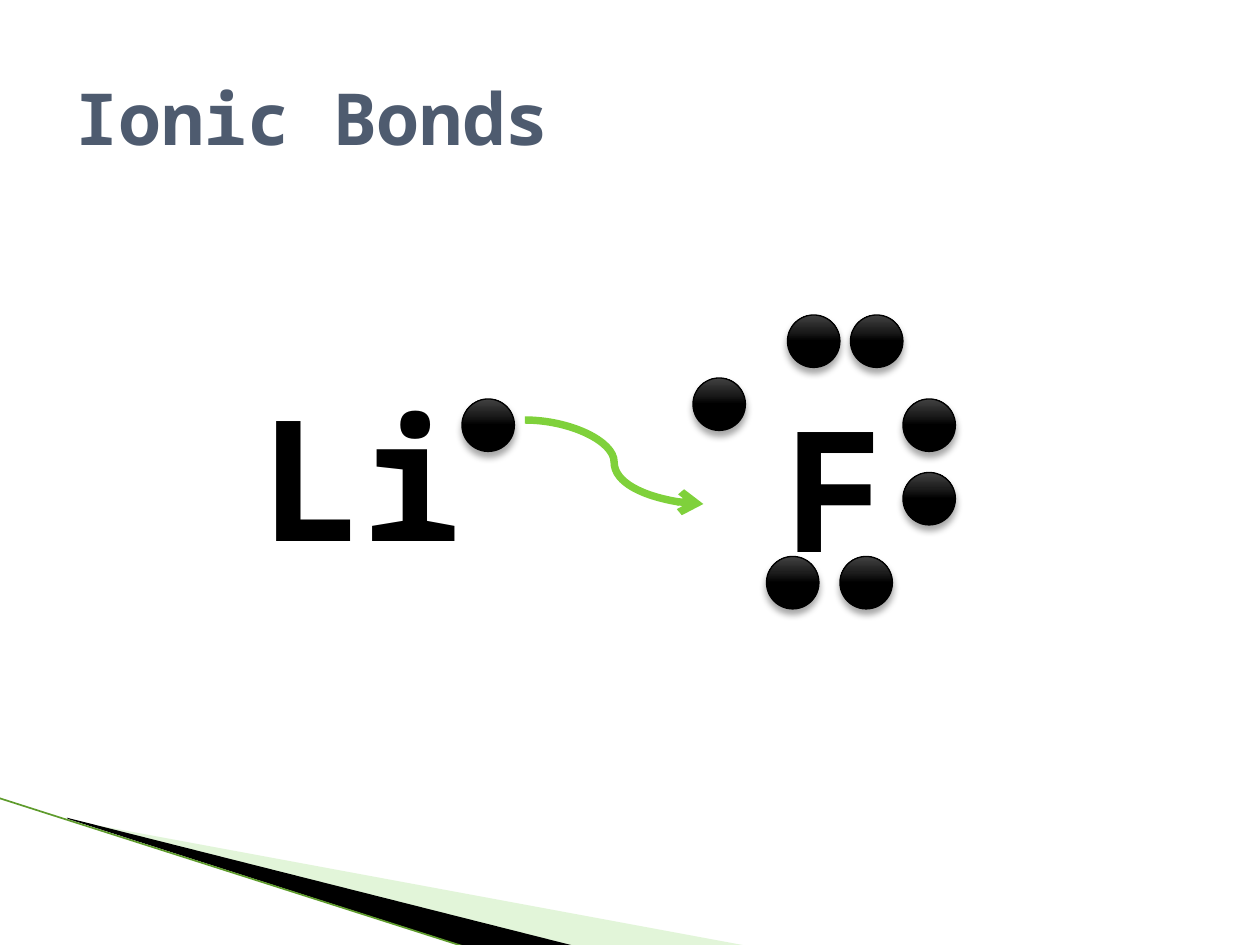
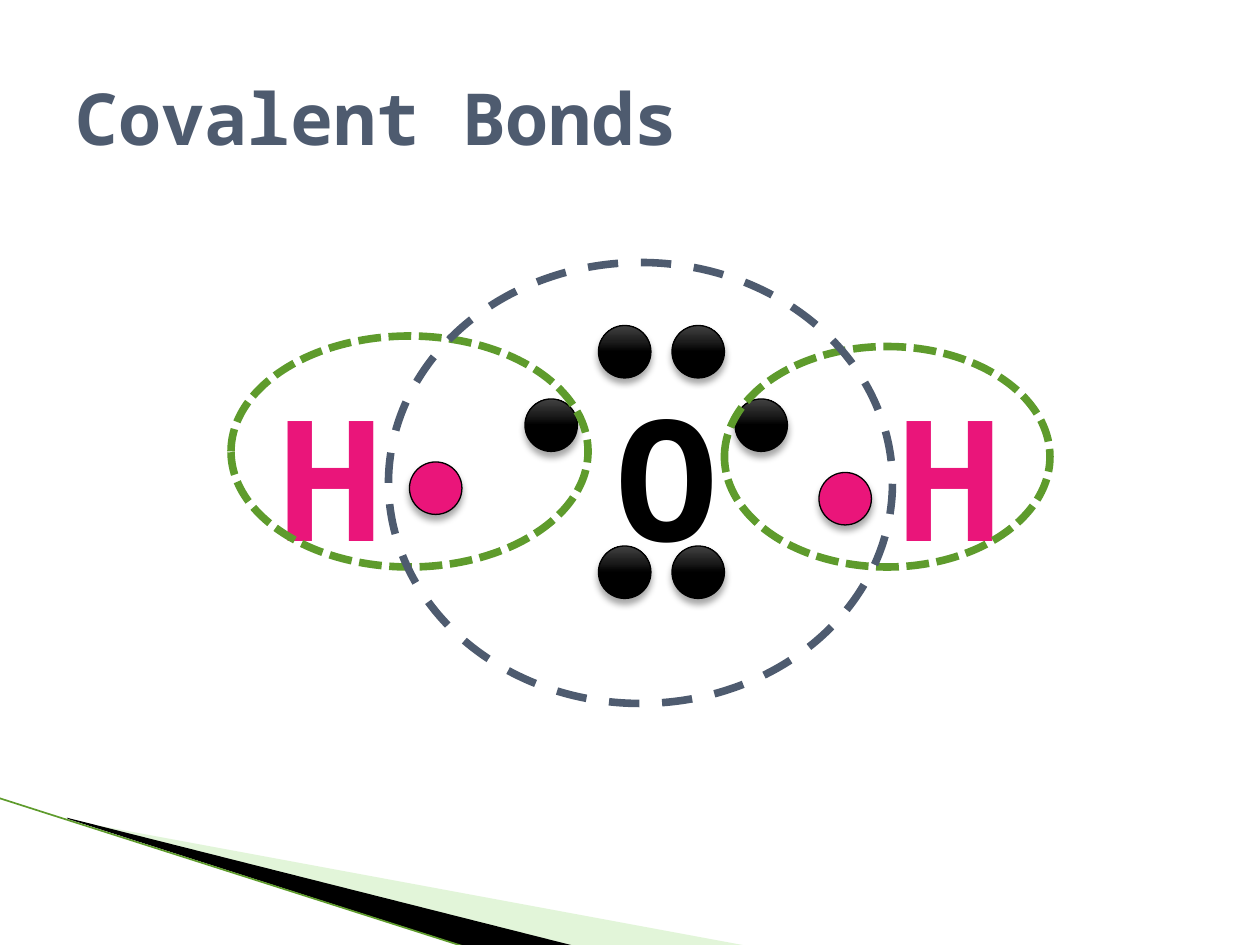
import pptx
import pptx.util
import pptx.dml.color
import pptx.enum.dml
import pptx.enum.shapes
import pptx.enum.text
import pptx.oxml.ns
import lxml.etree

PX = 9525
FONT = "Noto Sans Mono"
DOT = 40
INK = {
    "slate": "4E5B6F", "black": "000000", "white": "FFFFFF", "pink": "EA157A",
    "lime": "7FD13B", "green": "5E9B2C", "pale": "B8E7A1", "soot": "1D1D1D",
    "coal": "424242",
}
GLOSS = [(0, "black"), (50, "black"), (70, "soot"), (100, "coal")]
WEDGES = [
    ("pale", 40, [(53, 625), (571, 721), (438, 721), (53, 624)]),
    ("black", 100, [(51, 623), (439, 721), (357, 722), (52, 624)]),
]
DASH = pptx.enum.dml.MSO_LINE
OVAL = pptx.enum.shapes.MSO_SHAPE.OVAL
LINK = pptx.enum.shapes.MSO_CONNECTOR
ALIGN = pptx.enum.text.PP_ALIGN
qn = pptx.oxml.ns.qn

# letters: text, colour, left, top; dots: colour, left, top
# rings: colour, dash, left, top, width, height; arrows: from x, y, to x, y
SLIDES = [
    {
        "title": "Ionic Bonds",
        "letters": [("Li", "black", 168, 280), ("F", "black", 528, 288)],
        "dots": [
            ("black", 352, 304), ("black", 600, 240), ("black", 648, 240),
            ("black", 688, 304), ("black", 688, 360), ("black", 640, 424),
            ("black", 584, 424), ("black", 528, 288),
        ],
        "rings": [],
        "arrows": [(400, 320, 536, 384)],
    },
    {
        "title": "Covalent Bonds",
        "letters": [("H", "pink", 144, 280), ("H", "pink", 616, 280),
                    ("O", "black", 400, 280)],
        "dots": [
            ("pink", 312, 352), ("black", 456, 248), ("black", 512, 248),
            ("black", 400, 304), ("black", 560, 304), ("black", 456, 416),
            ("black", 512, 416), ("pink", 624, 360),
        ],
        "rings": [
            ("green", DASH.SQUARE_DOT, 552, 264, 248, 168),
            ("green", DASH.SQUARE_DOT, 176, 256, 272, 176),
            ("slate", DASH.DASH, 296, 200, 384, 336),
        ],
        "arrows": [],
    },
]


def rgb(name):
    return pptx.dml.color.RGBColor.from_string(INK[name])


def add(root, tag, **attrs):
    """Append a child element to root and return it."""
    return lxml.etree.SubElement(root, qn(tag), {k: str(v) for k, v in attrs.items()})


deck = pptx.Presentation()
deck.slide_width = 960 * PX
deck.slide_height = 720 * PX

for page in SLIDES:
    slide = deck.slides.add_slide(deck.slide_layouts[6])
    shapes = slide.shapes
    slide.background.fill.solid()
    slide.background.fill.fore_color.rgb = rgb("white")

    # Corner band
    for ink, alpha, points in WEDGES:
        pen = shapes.build_freeform(*points[0], scale=PX)
        pen.add_line_segments(points[1:], close=True)
        wedge = pen.convert_to_shape()
        wedge.shadow.inherit = False
        wedge.fill.solid()
        wedge.fill.fore_color.rgb = rgb(ink)
        wedge.line.fill.background()
        if alpha < 100:
            tint = wedge.fill._xPr.find(".//" + qn("a:srgbClr"))
            add(tint, "a:alpha", val=alpha * 1000)
    edge = shapes.add_connector(LINK.STRAIGHT, -1 * PX, 608 * PX, 356 * PX, 722 * PX)
    edge.line.color.rgb = rgb("green")
    edge.line.width = pptx.util.Pt(0.95)
    add(edge._element.spPr, "a:effectLst")

    # Title and letters
    texts = [(page["title"], "slate", 48, 29, 864, 120, 41)]
    texts += [(*item, 216, 165, 96) for item in page["letters"]]
    for text, ink, left, top, wide, high, size in texts:
        box = shapes.add_textbox(left * PX, top * PX, wide * PX, high * PX)
        frame = box.text_frame
        frame.word_wrap = True
        para = frame.paragraphs[0]
        run = para.add_run()
        run.text = text
        run.font.name = FONT
        run.font.size = pptx.util.Pt(size)
        run.font.bold = True
        run.font.color.rgb = rgb(ink)
        if size == 41:
            frame.vertical_anchor = pptx.enum.text.MSO_ANCHOR.MIDDLE
        else:
            frame.auto_size = pptx.enum.text.MSO_AUTO_SIZE.SHAPE_TO_FIT_TEXT
            para.alignment = ALIGN.CENTER
            props = run._r.get_or_add_rPr()
            rim = add(props, "a:ln", w=17780)
            add(add(rim, "a:solidFill"), "a:srgbClr", val=INK["white"])
            props.insert(0, rim)

    # Electrons
    for ink, left, top in page["dots"]:
        dot = shapes.add_shape(OVAL, left * PX, top * PX, DOT * PX, DOT * PX)
        dot.line.color.rgb = rgb("black")
        dot.line.width = pptx.util.Pt(0.75)
        if ink == "black":
            dot.fill.gradient()
            dot.fill.gradient_angle = 90
            stops = dot._element.spPr.find(".//" + qn("a:gsLst"))
            stops.clear()
            for spot, shade in GLOSS:
                add(add(stops, "a:gs", pos=spot * 1000), "a:srgbClr", val=INK[shade])
        else:
            dot.fill.solid()
            dot.fill.fore_color.rgb = rgb(ink)
        dot.shadow.inherit = False
        glow = dot._element.spPr.find(qn("a:effectLst"))
        cast = add(glow, "a:outerShdw", blurRad=50800, dist=38100, dir=5400000,
                   rotWithShape=0)
        add(add(cast, "a:srgbClr", val=INK["black"]), "a:alpha", val=35000)

    # Shells
    for ink, dash, left, top, wide, high in page["rings"]:
        ring = shapes.add_shape(OVAL, left * PX, top * PX, wide * PX, high * PX)
        ring.shadow.inherit = False
        ring.fill.background()
        ring.line.color.rgb = rgb(ink)
        ring.line.width = pptx.util.Pt(4.33)
        ring.line.dash_style = dash

    # Electron transfer
    for ends in page["arrows"]:
        arrow = shapes.add_connector(LINK.CURVE, *[end * PX for end in ends])
        arrow.line.color.rgb = rgb("lime")
        arrow.line.width = pptx.util.Pt(4.25)
        add(arrow.line._get_or_add_ln(), "a:tailEnd", type="arrow")
        add(arrow._element.spPr, "a:effectLst")

deck.save("out.pptx")
